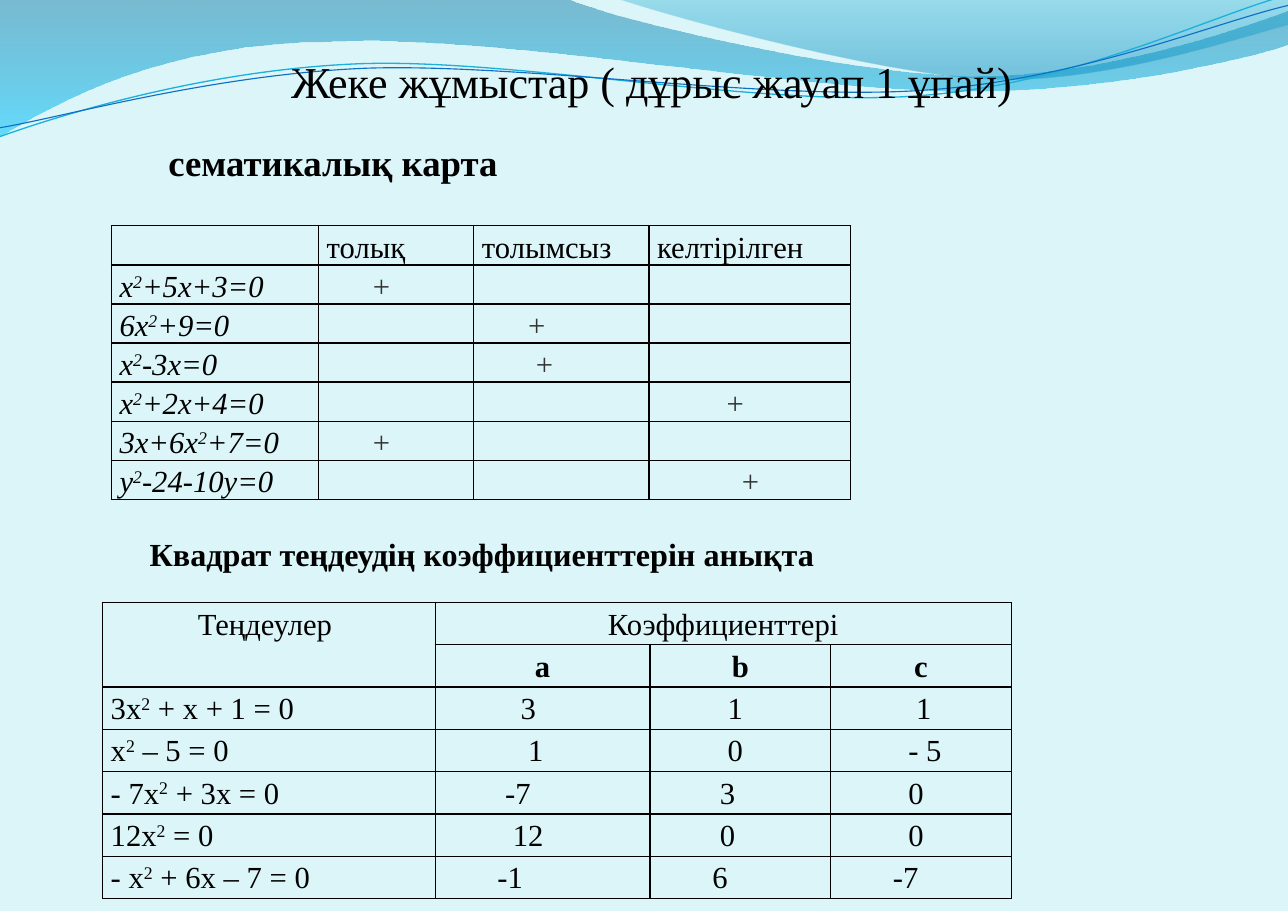
from lxml.etree import SubElement
from math import cos, radians, sin
from pptx import Presentation
from pptx.dml.color import RGBColor
from pptx.enum.text import MSO_ANCHOR as Anchor, PP_ALIGN as Align
from pptx.oxml import parse_xml
from pptx.oxml.ns import nsdecls, qn
from pptx.util import Inches, Pt

FONT = "Times New Roman"
BLACK = RGBColor(0x00, 0x00, 0x00)
GREY = RGBColor(0x33, 0x33, 0x33)
PALE = RGBColor(0xDB, 0xF5, 0xF9)
DEEP = RGBColor(0x00, 0x74, 0xA1)
CYAN = RGBColor(0x00, 0xC6, 0xFD)
TEAL = RGBColor(0x00, 0xA1, 0xCE)
OCEAN = RGBColor(0x00, 0x8B, 0xBF)
SKY = RGBColor(0x1C, 0xB0, 0xDA)
BLUE = RGBColor(0x0F, 0x6F, 0xC6)
SPACE = 0.07
TILT = 2.7

BROAD_WAVE = [
    [(0, 0)], [(5.15, -0.01)],
    [(5.56, 0.18), (7.76, 0.69), (8.87, 0.69)],
    [(9.98, 0.69), (11.21, 0.28), (11.69, 0.1)],
    [(11.71, 0.4)],
    [(11.5, 0.48), (10.17, 0.84), (8.72, 0.83)],
    [(7.27, 0.83), (4.46, 0.31), (3.01, 0.38)],
    [(1.51, 0.39), (0.54, 0.91), (-0.01, 1.25)],
]
RIGHT_WAVE = [
    [(5.6, -0.01)],
    [(5.96, 0.12), (7.97, 0.68), (8.99, 0.72)],
    [(10.01, 0.76), (11.24, 0.35), (11.69, 0.23)],
    [(11.69, 0)],
]
SKY_LINE = [
    [(0, 1.24)],
    [(0.56, 1.04), (1.85, 0.64), (3.23, 0.58)],
    [(4.62, 0.52), (6.93, 0.98), (8.33, 0.87)],
    [(9.74, 0.77), (10.97, 0.15), (11.67, -0.04)],
]
BLUE_LINE = [
    [(0, 1.16)],
    [(0.55, 1.07), (1.91, 0.68), (3.31, 0.62)],
    [(4.71, 0.57), (6.98, 0.92), (8.38, 0.82)],
    [(9.78, 0.73), (11.01, 0.21), (11.69, 0.05)],
]

KINDS = ["толық", "толымсыз", "келтірілген"]
MAP_ROWS = [
    ("х²+5х+3=0", 1, 6), ("6х²+9=0", 2, 6), ("х²-3х=0", 2, 7),
    ("х²+2х+4=0", 3, 9), ("3х+6х²+7=0", 1, 6), ("у²-24-10у=0", 3, 11),
]
COEFFICIENT_ROWS = [
    ("3x² + x + 1 = 0", [("3", 10), ("1", 9), ("1", 10)]),
    ("x² – 5 = 0", [("1", 11), ("0", 9), ("- 5", 9)]),
    ("- 7x² + 3x = 0", [("-7", 8), ("3", 8), ("0", 9)]),
    ("12x² = 0", [("12", 9), ("0", 8), ("0", 9)]),
    ("- x² + 6x – 7 = 0", [("-1", 7), ("6", 7), ("-7", 7)]),
]


def add_outline(slide, segments, close):
    """Add an unshadowed freeform whose three-point segments are cubic curves."""
    points = [(Inches(x), Inches(y)) for segment in segments for x, y in segment]
    builder = slide.shapes.build_freeform(*points[0])
    builder.add_line_segments(points[1:], close=close)
    outline = builder.convert_to_shape()
    outline.shadow.inherit = False
    corners = iter(list(outline._element.iter(qn("a:lnTo"))))
    for segment in segments[1:]:
        first, *others = [next(corners) for _ in segment]
        if others:
            first.tag = qn("a:cubicBezTo")
            for corner in others:
                first.append(corner[0])
                corner.getparent().remove(corner)
    return outline


def add_wave(slide, segments, stops):
    """Add a wave with a translucent gradient from top to bottom."""
    wave = add_outline(slide, segments, True)
    wave.line.fill.background()
    wave.fill.gradient()
    wave.fill.gradient_angle = 270
    for stop, (position, color, _) in zip(wave.fill.gradient_stops, stops):
        stop.position = position
        stop.color.rgb = color
    tints = wave._element.spPr.iter(qn("a:srgbClr"))
    for tint, (_, _, opacity) in zip(tints, stops):
        SubElement(tint, qn("a:alpha"), val=str(opacity * 1000))


def level(point, center):
    """Turn a point clockwise about the center by the tilt."""
    x, y = point[0] - center[0], point[1] - center[1]
    c, s = cos(radians(TILT)), sin(radians(TILT))
    return center[0] + x * c - y * s, center[1] + x * s + y * c


def add_swirl(slide, segments, center, color, width):
    """Add a thin curved line, tilted about its center."""
    levelled = [[level(point, center) for point in segment] for segment in segments]
    swirl = add_outline(slide, levelled, False)
    swirl.rotation = 360 - TILT
    swirl.fill.background()
    swirl.line.color.rgb = color
    swirl.line.width = Pt(width)


def add_backdrop(slide):
    """Paint the background with its waves and lines."""
    slide.background.fill.solid()
    slide.background.fill.fore_color.rgb = PALE
    add_wave(slide, BROAD_WAVE, [(0, DEEP, 45), (1, CYAN, 55)])
    add_wave(slide, RIGHT_WAVE, [(0, TEAL, 30), (0.8, OCEAN, 45)])
    add_swirl(slide, SKY_LINE, (5.84, 0.63), SKY, 0.85)
    add_swirl(slide, BLUE_LINE, (5.85, 0.65), BLUE, 0.75)


def style_runs(paragraph, size, color=BLACK, bold=False, italic=False):
    """Give every run of the paragraph the same look."""
    for run in paragraph.runs:
        font = run.font
        font.name, font.size, font.bold, font.italic = FONT, Pt(size), bold, italic
        font.color.rgb = color


def place_title(slide, left, top, width, height):
    """Place the slide title in front of the waves."""
    title = slide.shapes.title
    title.left, title.top, title.width, title.height = map(Inches, (left, top, width, height))
    frame = title.text_frame
    frame.text = "Жеке жұмыстар ( дұрыс жауап 1 ұпай)"
    frame.vertical_anchor = Anchor.BOTTOM
    frame.margin_left = Inches(0.14)
    frame.margin_right = frame.margin_bottom = 0
    frame.paragraphs[0].alignment = Align.CENTER
    style_runs(frame.paragraphs[0], 28.8)
    slide.shapes._spTree.append(title._element)


def add_heading(slide, text, size, left, top, width, height):
    """Add a bold heading above a table."""
    heading = slide.shapes.add_textbox(*map(Inches, (left, top, width, height)))
    heading.text_frame.word_wrap = True
    heading.text_frame.text = text
    style_runs(heading.text_frame.paragraphs[0], size, bold=True)


def fill_cell(cell, text, spaces=0, align=Align.LEFT, **look):
    """Write a cell, raising the power of an equation and indenting the value."""
    paragraph = cell.text_frame.paragraphs[0]
    base, power, rest = text.partition("²")
    paragraph.text = base
    if power:
        exponent = paragraph.add_run()
        exponent.text = "2"
        exponent._r.get_or_add_rPr().set("baseline", "30000")
        paragraph.add_run().text = rest
    paragraph.alignment = align
    paragraph.line_spacing = 1.15
    properties = paragraph._p.get_or_add_pPr()
    properties.set("marL", str(Inches(SPACE * spaces)))
    properties.set("indent", "0")
    style_runs(paragraph, 20, **look)


def add_grid(slide, left, top, widths, row_height, row_count):
    """Add an unfilled table with thin black borders."""
    box = (left, top, sum(widths), row_height * row_count)
    grid = slide.shapes.add_table(row_count, len(widths), *map(Inches, box)).table
    grid.first_row = grid.horz_banding = False
    for column, width in zip(grid.columns, widths):
        column.width = Inches(width)
    for row in grid.rows:
        row.height = Inches(row_height)
    for cell in grid.iter_cells():
        cell.margin_left = cell.margin_right = Pt(5.4)
        cell.margin_top = cell.margin_bottom = 0
        cell.fill.background()
        for index, side in enumerate("LRTB"):
            cell._tc.get_or_add_tcPr().insert(index, parse_xml(
                f'<a:ln{side} {nsdecls("a")} w="{Pt(1)}"><a:solidFill>'
                f'<a:srgbClr val="{BLACK}"/></a:solidFill></a:ln{side}>'))
    return grid


def add_semantic_map(slide, left, top):
    """Add the table that sorts equations by kind."""
    grid = add_grid(slide, left, top, [1.88, 1.41, 1.59, 1.83], 0.35, len(MAP_ROWS) + 1)
    for column, kind in enumerate(KINDS, 1):
        fill_cell(grid.cell(0, column), kind)
    for row, (equation, column, spaces) in enumerate(MAP_ROWS, 1):
        fill_cell(grid.cell(row, 0), equation, italic=True)
        fill_cell(grid.cell(row, column), "+", spaces, color=GREY)


def add_coefficients(slide, left, top):
    """Add the table of equations and their coefficients."""
    grid = add_grid(slide, left, top, [3.02, 1.95, 1.64, 1.64], 0.38, len(COEFFICIENT_ROWS) + 2)
    grid.cell(0, 0).merge(grid.cell(1, 0))
    grid.cell(0, 1).merge(grid.cell(0, 3))
    fill_cell(grid.cell(0, 0), "Теңдеулер ", align=Align.CENTER)
    fill_cell(grid.cell(0, 1), "Коэффициенттері", align=Align.CENTER)
    for column, letter in enumerate("abc", 1):
        fill_cell(grid.cell(1, column), letter, align=Align.CENTER, bold=True)
    for row, (equation, values) in enumerate(COEFFICIENT_ROWS, 2):
        fill_cell(grid.cell(row, 0), equation)
        for column, (value, spaces) in enumerate(values, 1):
            fill_cell(grid.cell(row, column), value, spaces)


def main():
    """Build the slide and save it."""
    deck = Presentation()
    deck.slide_width, deck.slide_height = Inches(11.69), Inches(8.27)
    slide = deck.slides.add_slide(deck.slide_layouts[5])
    add_backdrop(slide)
    place_title(slide, 0.58, 0, 10.53, 0.97)
    add_semantic_map(slide, 1.01, 2.05)
    add_heading(slide, "сематикалық карта", 24, 1.43, 1.22, 5.85, 0.5)
    add_heading(slide, "Квадрат теңдеудің коэффициенттерін анықта", 21, 1.26, 4.8, 8.75, 0.45)
    add_coefficients(slide, 0.93, 5.47)
    deck.save("out.pptx")


if __name__ == "__main__":
    main()
